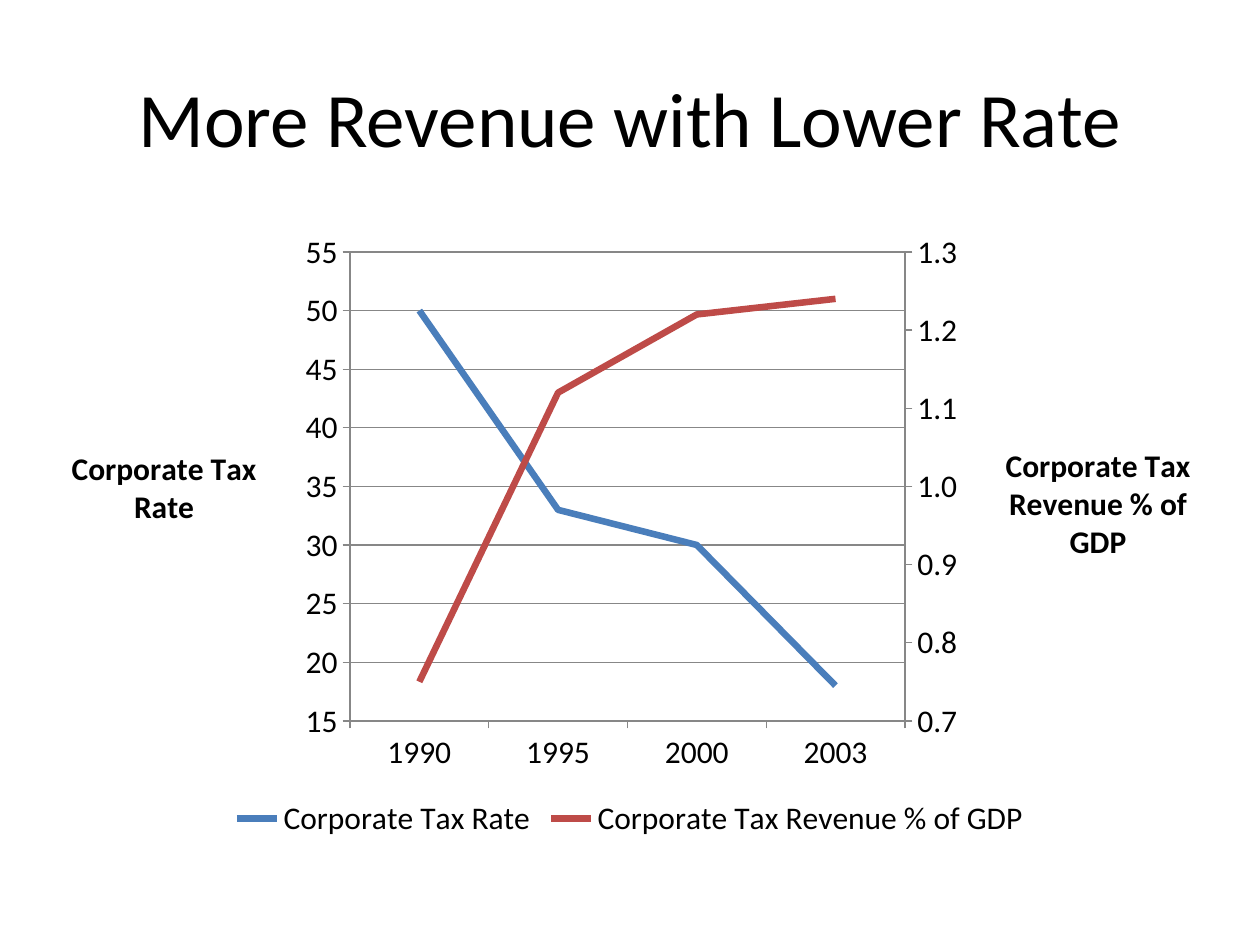
from copy import deepcopy

from lxml.etree import SubElement
from pptx import Presentation
from pptx.chart.axis import ValueAxis
from pptx.chart.data import CategoryChartData
from pptx.dml.color import RGBColor
from pptx.enum.chart import XL_CHART_TYPE, XL_LEGEND_POSITION, XL_TICK_MARK
from pptx.enum.text import MSO_ANCHOR, PP_ALIGN
from pptx.oxml.ns import qn
from pptx.util import Pt

RATE = "Corporate Tax Rate"
REVENUE = "Corporate Tax Revenue % of GDP"
YEARS = (1990, 1995, 2000, 2003)
MEASURES = {
    RATE: ((50, 33, 30, 18), "4A7EBB"),
    REVENUE: ((0.75, 1.12, 1.22, 1.24), "BE4B48"),
}
CHART_WIDTH, CHART_HEIGHT = 1134, 624


def px(length):
    return round(length * 914400 / 126)


def rgb(code):
    return RGBColor.from_string(code)


def assign(target, values):
    for name, value in values.items():
        setattr(target, name, value)


def place(parent, index, **lengths):
    for former in parent.findall(qn("c:layout")):
        parent.remove(former)
    layout = parent.makeelement(qn("c:layout"))
    parent.insert(index, layout)
    manual = SubElement(layout, qn("c:manualLayout"))
    if "w" in lengths:
        SubElement(manual, qn("c:layoutTarget")).set("val", "inner")
    for side in ("x", "y"):
        SubElement(manual, qn(f"c:{side}Mode")).set("val", "edge")
    for side, length in lengths.items():
        whole = CHART_WIDTH if side in "xw" else CHART_HEIGHT
        SubElement(manual, qn(f"c:{side}")).set("val", str(length / whole))


class SlideBuilder:
    font, ink, axis_line = "Calibri", "000000", "878787"

    def __init__(self, deck):
        self.slide = deck.slides.add_slide(deck.slide_layouts[5])

    def style(self, font, size, bold=False):
        assign(font, {"name": self.font, "size": Pt(size), "bold": bold})
        font.color.rgb = rgb(self.ink)

    def title(self, wording, left, top, width, height):
        heading = self.slide.shapes.title
        assign(heading, {"left": px(left), "top": px(top),
                         "width": px(width), "height": px(height)})
        assign(heading.text_frame, {"text": wording, "word_wrap": True,
                                    "vertical_anchor": MSO_ANCHOR.MIDDLE})
        paragraph = heading.text_frame.paragraphs[0]
        paragraph.alignment = PP_ALIGN.CENTER
        self.style(paragraph.runs[0].font, 44)

    def line_chart(self, years, measures, left, top, width, height):
        table = CategoryChartData()
        table.categories = years
        for name, (values, _) in measures.items():
            table.add_series(name, values)
        chart = self.slide.shapes.add_chart(
            XL_CHART_TYPE.LINE, px(left), px(top), px(width), px(height), table).chart
        assign(chart, {"has_title": False, "has_legend": True})
        self.style(chart.font, 18)
        assign(chart.legend, {"position": XL_LEGEND_POSITION.BOTTOM,
                              "include_in_layout": False})
        for measure, (_, color) in zip(chart.plots[0].series, measures.values()):
            measure.smooth = False
            measure.format.line.width = Pt(3.75)
            measure.format.line.color.rgb = rgb(color)
        self.outline(chart.category_axis)
        return chart

    def outline(self, axis):
        assign(axis, {"major_tick_mark": XL_TICK_MARK.OUTSIDE,
                      "minor_tick_mark": XL_TICK_MARK.NONE})
        axis.format.line.color.rgb = rgb(self.axis_line)

    def value_axis(self, axis, caption, scale, number_format, x, y):
        self.outline(axis)
        assign(axis, scale)
        assign(axis.tick_labels, {"number_format": number_format,
                                  "number_format_is_linked": False})
        if axis.has_major_gridlines:
            axis.major_gridlines.format.line.color.rgb = rgb(self.axis_line)
        frame = axis.axis_title.text_frame
        frame.text = caption
        self.style(frame.paragraphs[0].runs[0].font, 18, True)
        title = axis.axis_title._element
        for body in title.iter(qn("a:bodyPr")):
            body.set("rot", "0")
            body.set("vert", "horz")
        place(title, 1, x=x, y=y)

    def second_axis(self, chart):
        plot_area = chart._chartSpace.chart.plotArea
        left_lines = plot_area.find(qn("c:lineChart"))
        right_lines = deepcopy(left_lines)
        left_lines.addnext(right_lines)
        for lines, surplus in ((left_lines, 1), (right_lines, 0)):
            lines.remove(lines.findall(qn("c:ser"))[surplus])
        years_axis = deepcopy(plot_area.find(qn("c:catAx")))
        right_axis = deepcopy(plot_area.find(qn("c:valAx")))
        plot_area.find(qn("c:valAx")).addnext(right_axis)
        right_axis.addnext(years_axis)
        for axis, own, other in ((years_axis, "5001", "5002"),
                                 (right_axis, "5002", "5001")):
            axis.find(qn("c:axId")).set("val", own)
            axis.find(qn("c:crossAx")).set("val", other)
        for link, number in zip(right_lines.findall(qn("c:axId")), ("5001", "5002")):
            link.set("val", number)
        years_axis.find(qn("c:delete")).set("val", "1")
        right_axis.find(qn("c:axPos")).set("val", "r")
        right_axis.find(qn("c:crosses")).set("val", "max")
        axis = ValueAxis(right_axis)
        axis.has_major_gridlines = False
        return axis


def main():
    deck = Presentation()
    assign(deck, {"slide_width": px(1260), "slide_height": px(945)})
    builder = SlideBuilder(deck)
    builder.title("More Revenue with Lower Rate", 63, 38, 1134, 158)
    chart = builder.line_chart(YEARS, MEASURES, 63, 220, CHART_WIDTH, CHART_HEIGHT)
    rate_axis = chart.value_axis
    revenue_axis = builder.second_axis(chart)
    builder.value_axis(
        rate_axis, RATE,
        {"minimum_scale": 15, "maximum_scale": 55, "major_unit": 5},
        "General", 3, 221)
    builder.value_axis(
        revenue_axis, REVENUE,
        {"minimum_scale": 0.7, "maximum_scale": 1.3, "major_unit": 0.1},
        "#,##0.0", 937, 218)
    place(chart._chartSpace.chart.plotArea, 0, x=287, y=32, w=555, h=469)
    deck.save("out.pptx")


if __name__ == "__main__":
    main()
